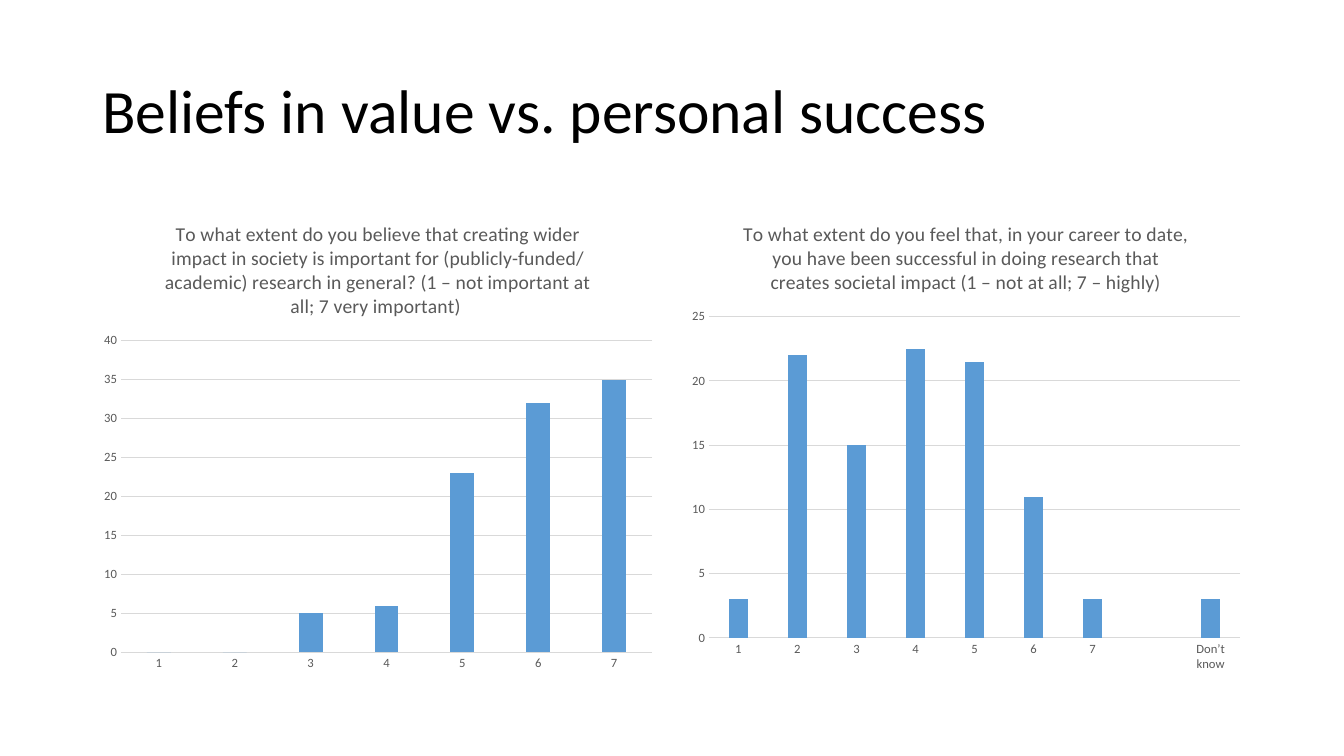
import dataclasses

import pptx
import pptx.chart.data
import pptx.dml.color
import pptx.enum.chart
import pptx.enum.text
import pptx.oxml
import pptx.oxml.ns
import pptx.util

Pt = pptx.util.Pt


# Colours, type sizes and font
@dataclasses.dataclass(frozen=True)
class Theme:
    font: str = "Calibri"
    ink: str = "000000"
    muted: str = "595959"
    grid: str = "D9D9D9"
    bar: str = "5B9BD5"
    title_size: float = 44
    question_size: float = 14
    chart_size: float = 10
    axis_size: float = 9


def rgb(value):
    return pptx.dml.color.RGBColor.from_string(value)


def format_font(font, name, size, color):
    font.name, font.size, font.bold = name, Pt(size), False
    font.color.rgb = rgb(color)


def write_text(frame, text, *, font, size, color, align, spacing=None):
    """Put one formatted paragraph in a text frame."""
    para = frame.paragraphs[0]
    para.alignment = align
    para.line_spacing = spacing
    span = para.add_run()
    span.text = text
    format_font(span.font, font, size, color)


class Page:
    """The current slide and the style its elements share."""

    def __init__(self, deck, theme):
        self.theme = theme
        self.slide = deck.slides.add_slide(deck.slide_layouts[5])

    def title(self, text, left, top, width, height):
        box = self.slide.shapes.title
        box.left, box.top, box.width, box.height = map(Pt, (left, top, width, height))
        frame = box.text_frame
        frame.word_wrap = True
        frame.auto_size = pptx.enum.text.MSO_AUTO_SIZE.NONE
        frame.vertical_anchor = pptx.enum.text.MSO_ANCHOR.MIDDLE
        write_text(frame, text, font=self.theme.font, size=self.theme.title_size,
                   color=self.theme.ink, align=pptx.enum.text.PP_ALIGN.LEFT, spacing=0.9)

    def axis(self, axis):
        axis.major_tick_mark = axis.minor_tick_mark = pptx.enum.chart.XL_TICK_MARK.NONE
        format_font(axis.tick_labels.font, self.theme.font, self.theme.axis_size,
                    self.theme.muted)

    def rule(self, line):
        line.color.rgb = rgb(self.theme.grid)
        line.width = Pt(0.75)

    def plot_area(self, chart, **fractions):
        """Fix the inner plot area, in fractions of the chart."""
        parts = "".join(f'<c:{key} val="{value}"/>' for key, value in fractions.items())
        layout = pptx.oxml.parse_xml(
            f'<c:layout {pptx.oxml.ns.nsdecls("c")}><c:manualLayout>'
            '<c:layoutTarget val="inner"/><c:xMode val="edge"/><c:yMode val="edge"/>'
            f'{parts}</c:manualLayout></c:layout>')
        area = chart._chartSpace.chart.plotArea
        for old in area.findall(pptx.oxml.ns.qn("c:layout")):
            area.remove(old)
        area.insert(0, layout)

    def columns(self, question, answers, left, top, width, height, *,
                maximum, plot_top, plot_height):
        theme = self.theme
        data = pptx.chart.data.CategoryChartData()
        data.categories = list(answers)
        data.add_series("Series 1", list(answers.values()))
        chart = self.slide.shapes.add_chart(
            pptx.enum.chart.XL_CHART_TYPE.COLUMN_CLUSTERED,
            *map(Pt, (left, top, width, height)), data).chart
        format_font(chart.font, theme.font, theme.chart_size, theme.ink)
        chart.has_legend = False
        write_text(chart.chart_title.text_frame, question, font=theme.font,
                   size=theme.question_size, color=theme.muted,
                   align=pptx.enum.text.PP_ALIGN.CENTER)
        chart.chart_title.include_in_layout = False

        # Axes and grid
        self.axis(chart.category_axis)
        self.rule(chart.category_axis.format.line)
        scale = chart.value_axis
        self.axis(scale)
        scale.format.line.fill.background()
        scale.minimum_scale, scale.maximum_scale, scale.major_unit = 0, maximum, 5
        self.rule(scale.major_gridlines.format.line)

        # Bars
        plot = chart.plots[0]
        plot.vary_by_categories = False
        plot.gap_width, plot.overlap = 219, -27
        bars = plot.series[0].format.fill
        bars.solid()
        bars.fore_color.rgb = rgb(theme.bar)
        self.plot_area(chart, x=0.05, y=plot_top, w=0.93, h=plot_height)


def main():
    deck = pptx.Presentation()
    deck.slide_width, deck.slide_height = Pt(960), Pt(540)
    page = Page(deck, Theme())

    # Heading
    margin = 66
    page.title("Beliefs in value vs. personal success", margin, 28.75, 828, 104.4)

    # Two charts, mirrored about the middle of the slide
    top, width, height = 144, 408, 342.6
    page.columns(
        "To what extent do you believe that creating wider impact in society is important "
        "for (publicly-funded/ academic) research in general? "
        "(1 – not important at all; 7 very important) ",
        {"1": 0, "2": 0, "3": 5, "4": 6, "5": 23, "6": 32, "7": 35},
        margin, top, width, height, maximum=40, plot_top=0.29, plot_height=0.65)
    page.columns(
        "To what extent do you feel that, in your career to date, you have been successful "
        "in doing research that creates societal impact (1 – not at all; 7 – highly)",
        {"1": 3, "2": 22, "3": 15, "4": 22.5, "5": 21.5, "6": 11, "7": 3,
         "": None, "Don’t know": 3},
        960 - margin - width, top, width, height,
        maximum=25, plot_top=0.24, plot_height=0.67)

    deck.save("out.pptx")


if __name__ == "__main__":
    main()
